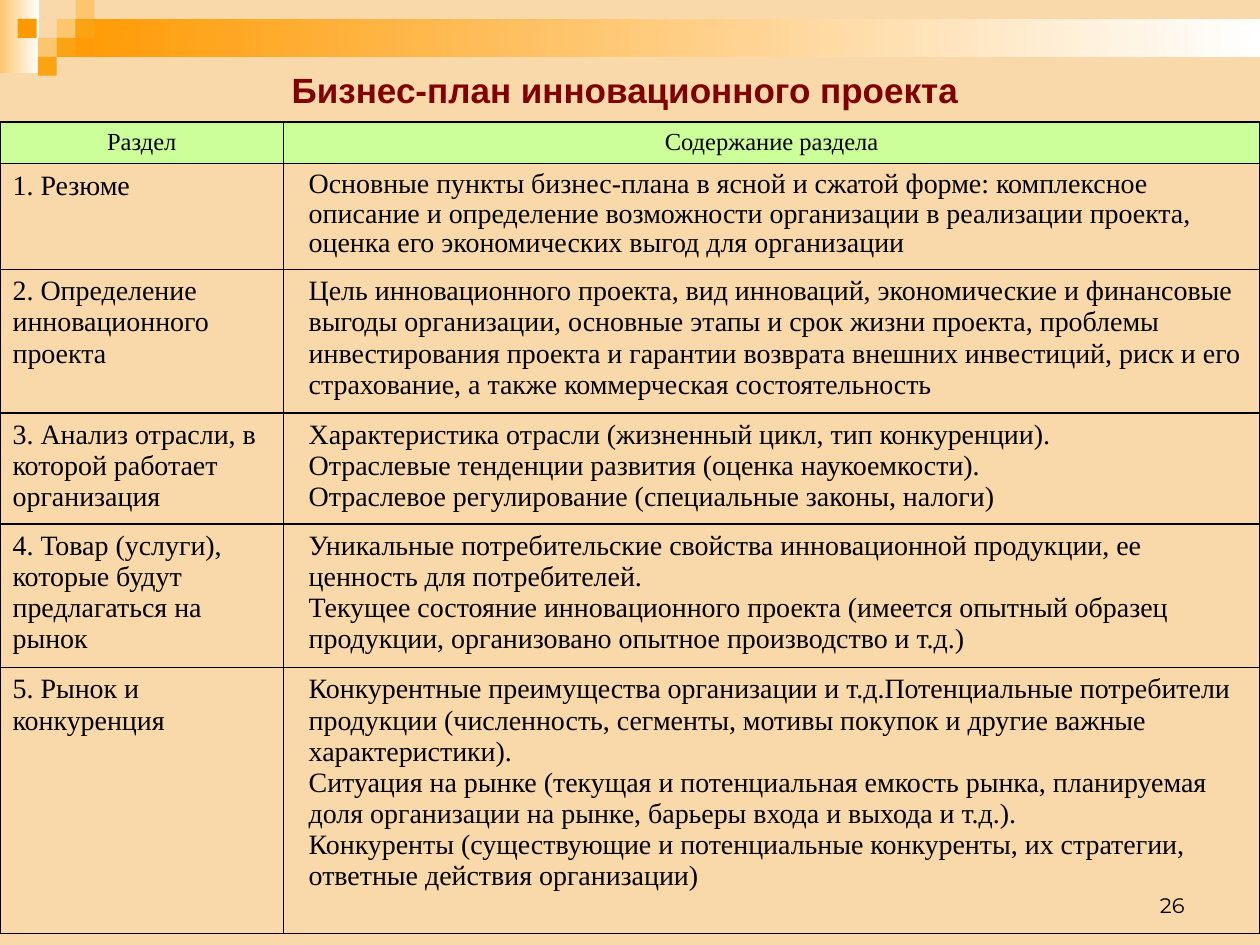
from lxml.etree import SubElement
from pptx import Presentation
from pptx.dml.color import RGBColor
from pptx.enum.shapes import MSO_SHAPE
from pptx.enum.text import MSO_ANCHOR, PP_ALIGN
from pptx.oxml.ns import qn
from pptx.util import Inches, Pt

C = {"bg": "F9D9A9", "pale": "FCC66E", "mid": "FBA313", "orange": "FF9900",
     "white": "FFFFFF", "header": "CCFF99", "title": "800000", "black": "000000"}
SERIF = "Times New Roman"


def rgb(name):
    return RGBColor.from_string(C[name])


def write(tf, text, size=16, font=SERIF, color="black", bold=False,
          align=PP_ALIGN.LEFT, indent=0, hanging=0, spacing=None):
    p = tf.paragraphs[0]
    p.text = text
    p.alignment = align
    p.line_spacing = spacing
    pPr = p._p.get_or_add_pPr()
    pPr.set("marL", str(Inches(indent)))
    pPr.set("indent", str(Inches(-hanging)))
    for r in p.runs:
        r.font.size = Pt(size)
        r.font.name = font
        r.font.bold = bold
        r.font.color.rgb = rgb(color)


prs = Presentation()
prs.slide_width, prs.slide_height = Inches(10), Inches(7.5)
s = prs.slides.add_slide(prs.slide_layouts[5])
s.background.fill.solid()
s.background.fill.fore_color.rgb = rgb("bg")

Q = 0.15
bars = [
    (0, 0, 0.31, 0.58, "pale", "white"),
    (0.45, Q, 9.55, 0.3, "orange", "white"),
    (0.45, Q, Q, Q, "pale", None),
    (0.6, 0, Q, Q, "pale", None),
    (0.6, Q, Q, Q, "mid", None),
    (0.3, 0.3, Q, Q, "pale", None),
    (0.14, Q, Q, Q, "orange", None),
    (0.45, 0.3, Q, Q, "mid", None),
    (0.3, 0.45, Q, Q, "mid", None),
]
for x, y, w, h, color, fade in bars:
    sp = s.shapes.add_shape(MSO_SHAPE.RECTANGLE, Inches(x), Inches(y), Inches(w), Inches(h))
    sp.shadow.inherit = False
    sp.line.fill.background()
    if fade:
        sp.fill.gradient()
        sp.fill.gradient_angle = 0
        for stop, name, pos in zip(sp.fill.gradient_stops, (color, fade), (0, 1)):
            stop.color.rgb = rgb(name)
            stop.position = pos
    else:
        sp.fill.solid()
        sp.fill.fore_color.rgb = rgb(color)

sections = [
    ("Раздел", "Содержание раздела"),
    ("1. Резюме",
     "Основные пункты бизнес-плана в ясной и сжатой форме: комплексное описание и определение "
     "возможности организации в реализации проекта, оценка его экономических выгод для организации"),
    ("2. Определение инновационного проекта",
     "Цель инновационного проекта, вид инноваций, экономические и финансовые выгоды организации, "
     "основные этапы и срок жизни проекта, проблемы инвестирования проекта и гарантии возврата "
     "внешних инвестиций, риск и его страхование, а также коммерческая состоятельность"),
    ("3. Анализ отрасли, в которой работает организация",
     "Характеристика отрасли (жизненный цикл, тип конкуренции).\v"
     "Отраслевые тенденции развития (оценка наукоемкости).\v"
     "Отраслевое регулирование (специальные законы, налоги)"),
    ("4. Товар (услуги), которые будут предлагаться на рынок",
     "Уникальные потребительские свойства инновационной продукции, ее ценность для потребителей.\v"
     "Текущее состояние инновационного проекта (имеется опытный образец продукции, "
     "организовано опытное производство и т.д.)"),
    ("5. Рынок и конкуренция",
     "Конкурентные преимущества организации и т.д.Потенциальные потребители продукции "
     "(численность, сегменты, мотивы покупок и другие важные характеристики).\v"
     "Ситуация на рынке (текущая и потенциальная емкость рынка, планируемая доля организации "
     "на рынке, барьеры входа и выхода и т.д.).\v"
     "Конкуренты (существующие и потенциальные конкуренты, их стратегии, "
     "ответные действия организации)"),
]
heights = [0.26, 0.33, 0.84, 1.14, 0.88, 1.14, 2.11]
table = s.shapes.add_table(len(heights), 2, 0, Inches(0.71), Inches(10), Inches(6.79)).table
table.first_row = table.horz_banding = False
for col, w in zip(table.columns, (2.25, 7.75)):
    col.width = Inches(w)

for i, h in enumerate(heights):
    table.rows[i].height = Inches(h)
    for j in range(2):
        cell = table.cell(i, j)
        tcPr = cell._tc.get_or_add_tcPr()
        for side in ("lnL", "lnR", "lnT", "lnB"):
            ln = SubElement(tcPr, qn("a:" + side), w=str(Pt(1)))
            if i == 0 and side != "lnB":
                SubElement(ln, qn("a:noFill"))
            else:
                fill = SubElement(ln, qn("a:solidFill"))
                SubElement(fill, qn("a:srgbClr"), val=C["black"])
        if i == 1:
            cell.fill.solid()
            cell.fill.fore_color.rgb = rgb("header")
        else:
            cell.fill.background()
        if i == 0:
            SubElement(cell.text_frame.paragraphs[0]._p, qn("a:endParaRPr"), sz="800")
            continue
        text = sections[i - 1][j]
        if i == 1:
            write(cell.text_frame, text, size=14, align=PP_ALIGN.CENTER, indent=0.38, hanging=0.38)
        elif j == 1:
            write(cell.text_frame, text, indent=0.1, spacing=0.95 if i == 2 else None)
        elif i == 2:
            write(cell.text_frame, text, indent=0.38, hanging=0.38)
        else:
            write(cell.text_frame, text)
table.cell(0, 0).merge(table.cell(0, 1))

title = s.shapes.title
title.left, title.top, title.width, title.height = Inches(0.5), Inches(0.42), Inches(9), Inches(0.58)
title.text_frame.vertical_anchor = MSO_ANCHOR.MIDDLE
write(title.text_frame, "Бизнес-план инновационного проекта ", size=20, font="Arial",
      color="title", bold=True, align=PP_ALIGN.CENTER)

number = s.shapes.add_textbox(Inches(7.17), Inches(6.83), Inches(2.33), Inches(0.5))
number.text_frame.word_wrap = True
number.text_frame.vertical_anchor = MSO_ANCHOR.BOTTOM
write(number.text_frame, "26", size=12, font="Montserrat", align=PP_ALIGN.RIGHT)

prs.save("out.pptx")
